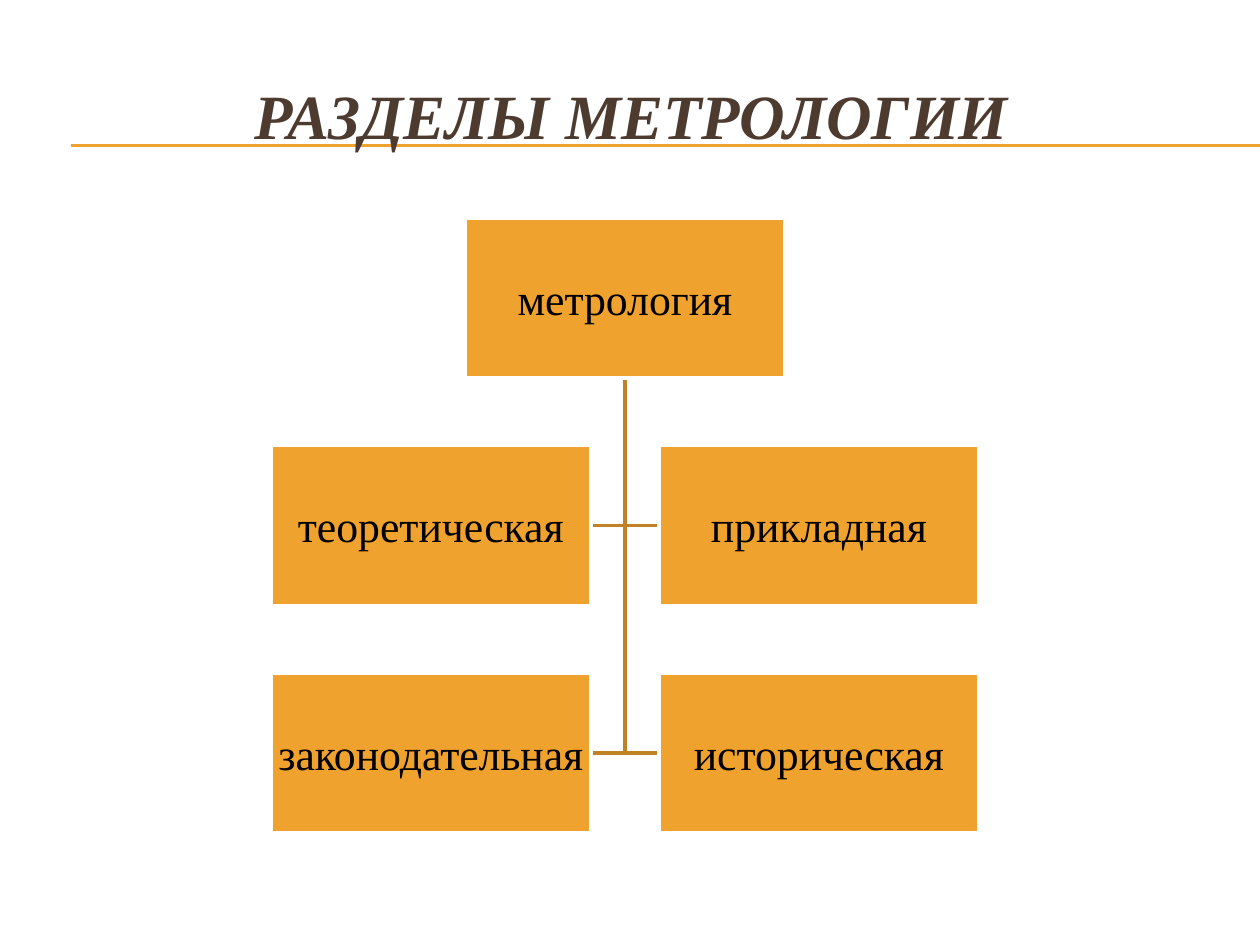
from pptx import Presentation
from pptx import util as u
from pptx.dml.color import RGBColor
from pptx.enum import shapes, text
from lxml import etree

COLORS = {"box": "F0A22E", "branch": "C08225", "title": "4E3B30",
          "text": "000000", "edge": "FFFFFF"}
FONT = "Times New Roman"
A_NS = "http://schemas.openxmlformats.org/drawingml/2006/main"

# Tree geometry in inches
BOX_W, BOX_H = 2.54, 1.27
CENTER_X, TOP = 4.96, 1.73
SIDE_GAP, ROW_STEP = 0.27, 1.805
ROOT = "метрология"
ROWS = [("теоретическая", "прикладная"),
        ("законодательная", "историческая")]


def rgb(name):
    return RGBColor.from_string(COLORS[name])


def write_text(s, content, size, color, bold=False, italic=False, inset=0.1):
    tf = s.text_frame
    tf.word_wrap = True
    tf.vertical_anchor = text.MSO_ANCHOR.MIDDLE
    tf.margin_left = tf.margin_right = u.Inches(inset)
    tf.margin_top = tf.margin_bottom = u.Inches(min(inset, 0.05))
    p = tf.paragraphs[0]
    p.alignment = text.PP_ALIGN.CENTER
    r = p.add_run()
    r.text = content
    r.font.name, r.font.size = FONT, u.Pt(size)
    r.font.bold, r.font.italic = bold, italic
    r.font.color.rgb = rgb(color)


def add_rule(sp, y):
    s = sp.add_connector(shapes.MSO_CONNECTOR.STRAIGHT, u.Inches(0.56),
                         u.Inches(y), u.Inches(10), u.Inches(y))
    s.line.color.rgb = rgb("box")
    s.line.width = u.Pt(0.75)
    etree.SubElement(s._element.spPr, f"{{{A_NS}}}effectLst")


def add_branch(sp, x, y):
    """Draw an elbow from under the root box to the side of a child box."""
    start = u.Inches(CENTER_X), u.Inches(TOP + BOX_H)
    fb = sp.build_freeform(*start)
    fb.add_line_segments([(u.Inches(CENTER_X), u.Inches(y)),
                          (u.Inches(x), u.Inches(y))], close=False)
    s = fb.convert_to_shape()
    s.shadow.inherit = False
    s.fill.background()
    s.line.color.rgb = rgb("branch")
    s.line.width = u.Pt(2)


def add_box(sp, x, y, label):
    s = sp.add_shape(shapes.MSO_SHAPE.RECTANGLE, u.Inches(x), u.Inches(y),
                     u.Inches(BOX_W), u.Inches(BOX_H))
    s.shadow.inherit = False
    s.fill.solid()
    s.fill.fore_color.rgb = rgb("box")
    s.line.color.rgb = rgb("edge")
    s.line.width = u.Pt(2)
    write_text(s, label, 25, "text", inset=0.02)


def main():
    prs = Presentation()
    prs.slide_width, prs.slide_height = u.Inches(10), u.Inches(7.5)
    sp = prs.slides.add_slide(prs.slide_layouts[6]).shapes

    # Rules and title
    for y in (1.15, 1.16):
        add_rule(sp, y)
    title = sp.add_textbox(u.Inches(0.51), u.Inches(0.28),
                           u.Inches(9), u.Inches(1.25))
    write_text(title, "РАЗДЕЛЫ МЕТРОЛОГИИ", 36, "title", bold=True, italic=True)

    # Branches lie behind the boxes
    row_tops = [TOP + ROW_STEP * i for i in range(1, len(ROWS) + 1)]
    for y in reversed(row_tops):
        for x in (CENTER_X + SIDE_GAP, CENTER_X - SIDE_GAP):
            add_branch(sp, x, y + BOX_H / 2)

    # Root and its sections
    add_box(sp, CENTER_X - BOX_W / 2, TOP, ROOT)
    for y, (left, right) in zip(row_tops, ROWS):
        add_box(sp, CENTER_X - SIDE_GAP - BOX_W, y, left)
        add_box(sp, CENTER_X + SIDE_GAP, y, right)

    prs.save("out.pptx")


if __name__ == "__main__":
    main()
